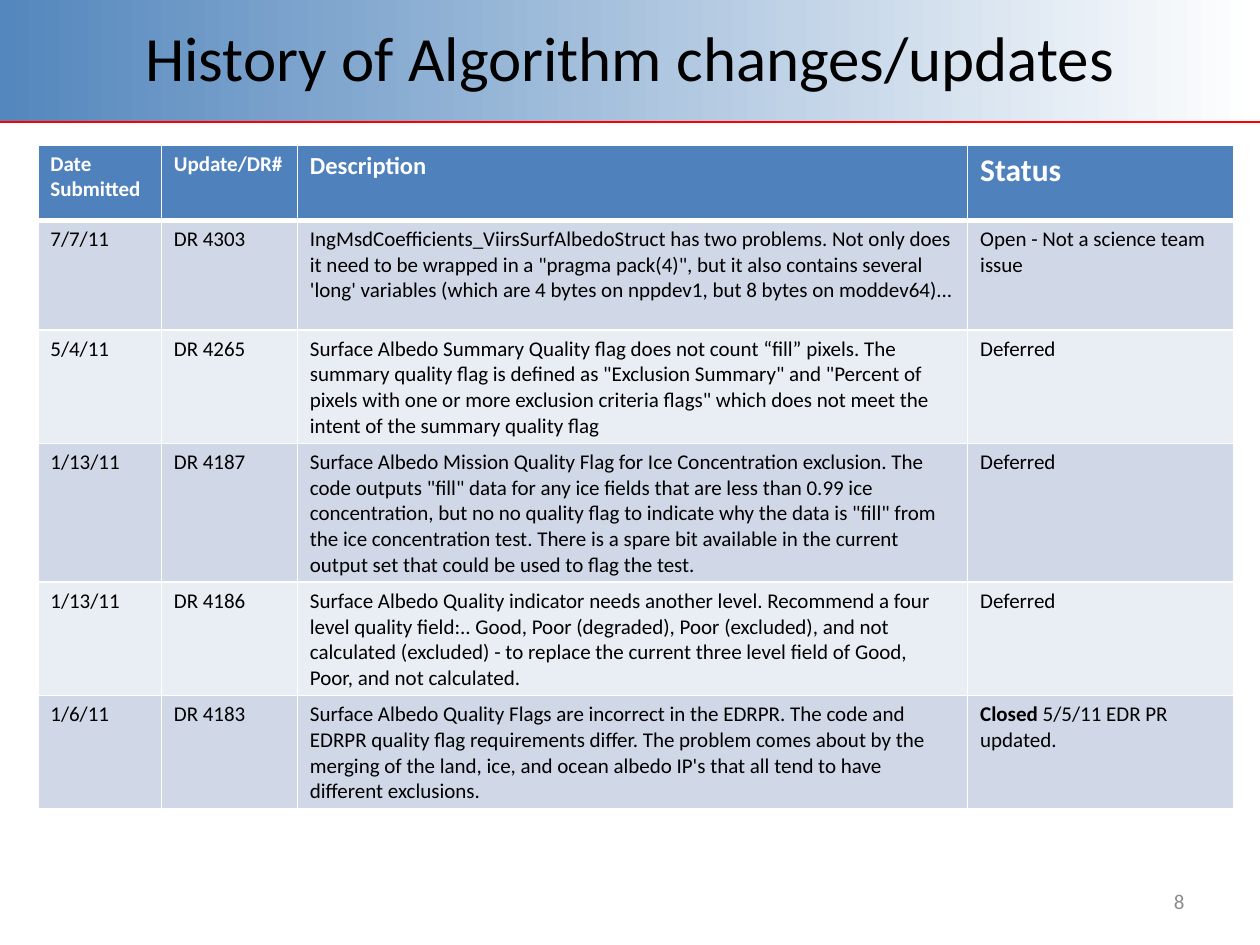
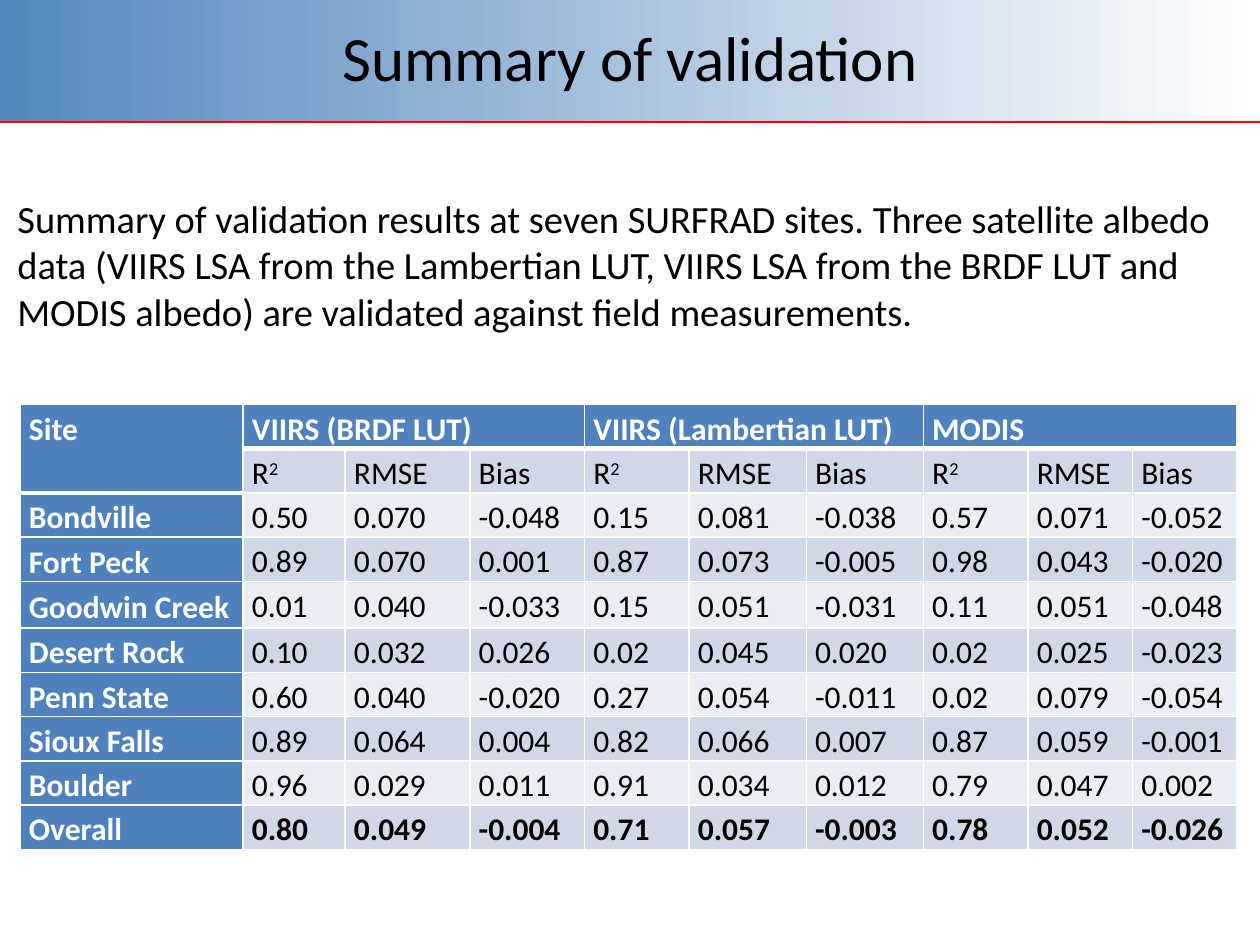
from dataclasses import dataclass

from lxml import etree
from pptx import Presentation
from pptx.dml.color import RGBColor
from pptx.enum.shapes import MSO_CONNECTOR, MSO_SHAPE
from pptx.enum.text import MSO_ANCHOR, PP_ALIGN
from pptx.oxml.ns import qn
from pptx.util import Inches, Pt

RECT = MSO_SHAPE.RECTANGLE
LINE = MSO_CONNECTOR.STRAIGHT
TOP, MID = MSO_ANCHOR.TOP, MSO_ANCHOR.MIDDLE
LEFT, CENTER, RIGHT = PP_ALIGN.LEFT, PP_ALIGN.CENTER, PP_ALIGN.RIGHT


@dataclass(frozen=True)
class Theme:
    font: str = "Calibri"
    black: str = "000000"
    white: str = "FFFFFF"
    gray: str = "8C8C8C"
    red: str = "FF0000"
    band: str = "5487BD"
    head: str = "4F81BD"
    dark: str = "D0D8E8"
    light: str = "E9EDF4"
    title: int = 36
    body: int = 22
    large: int = 18
    medium: int = 14
    small: int = 12
    thin: int = 1
    thick: int = 3


T = Theme()

# Change history
LOG_COLS = [0.98, 1.08, 5.32, 2.11]
LOG_ROWS = [0.6] + [0.87] * 5
LOG_HEAD = [("Date Submitted", T.small), ("Update/DR#", T.small),
            ("Description", T.medium), ("Status", T.large)]
LOG = [
    ("7/7/11", "DR 4303",
     "IngMsdCoefficients_ViirsSurfAlbedoStruct has two problems. Not only does "
     "it need to be wrapped in a \"pragma pack(4)\", but it also contains several "
     "'long' variables (which are 4 bytes on nppdev1, but 8 bytes on moddev64)...",
     "Open - Not a science team issue"),
    ("5/4/11", "DR 4265",
     "Surface Albedo Summary Quality flag does not count “fill” pixels. The "
     "summary quality flag is defined as \"Exclusion Summary\" and \"Percent of "
     "pixels with one or more exclusion criteria flags\" which does not meet the "
     "intent of the summary quality flag",
     "Deferred"),
    ("1/13/11", "DR 4187",
     "Surface Albedo Mission Quality Flag for Ice Concentration exclusion. The "
     "code outputs \"fill\" data for any ice fields that are less than 0.99 ice "
     "concentration, but no no quality flag to indicate why the data is \"fill\" "
     "from the ice concentration test. There is a spare bit available in the "
     "current output set that could be used to flag the test.",
     "Deferred"),
    ("1/13/11", "DR 4186",
     "Surface Albedo Quality indicator needs another level. Recommend a four "
     "level quality field:.. Good, Poor (degraded), Poor (excluded), and not "
     "calculated (excluded) - to replace the current three level field of Good, "
     "Poor, and not calculated.",
     "Deferred"),
    ("1/6/11", "DR 4183",
     "Surface Albedo Quality Flags are incorrect in the EDRPR. The code and "
     "EDRPR quality flag requirements differ. The problem comes about by the "
     "merging of the land, ice, and ocean albedo IP's that all tend to have "
     "different exclusions.",
     [("Closed", {"bold": True}), (" 5/5/11 EDR PR updated.", {})]),
]

# Validation results
SITE_COLS = [1.77, 0.81, 0.99, 0.91, 0.83, 0.93, 0.93, 0.83, 0.83, 0.83]
SITE_ROWS = [0.35] * 4 + [0.37] + [0.35] * 5
GROUPS = ["VIIRS (BRDF LUT)", "VIIRS (Lambertian LUT)", "MODIS"]
STATS = [[("R", {}), ("2", {"base": 30})], "RMSE", "Bias"]
SITES = [
    ("Bondville", "0.50 0.070 -0.048 0.15 0.081 -0.038 0.57 0.071 -0.052"),
    ("Fort Peck", "0.89 0.070 0.001 0.87 0.073 -0.005 0.98 0.043 -0.020"),
    ("Goodwin Creek", "0.01 0.040 -0.033 0.15 0.051 -0.031 0.11 0.051 -0.048"),
    ("Desert Rock", "0.10 0.032 0.026 0.02 0.045 0.020 0.02 0.025 -0.023"),
    ("Penn State", "0.60 0.040 -0.020 0.27 0.054 -0.011 0.02 0.079 -0.054"),
    ("Sioux Falls", "0.89 0.064 0.004 0.82 0.066 0.007 0.87 0.059 -0.001"),
    ("Boulder", "0.96 0.029 0.011 0.91 0.034 0.012 0.79 0.047 0.002"),
    ("Overall", "0.80 0.049 -0.004 0.71 0.057 -0.003 0.78 0.052 -0.026"),
]


def rgb(code):
    return RGBColor.from_string(code)


def box(*sizes):
    return [Inches(size) for size in sizes]


def write(frame, text, size=T.small, color=T.black, bold=False, align=LEFT,
          space=None):
    """Fill a frame with one paragraph: a string or (string, format) runs."""
    para = frame.paragraphs[0]
    para.alignment = align
    if space:
        para.line_spacing = space
    for words, form in [(text, {})] if isinstance(text, str) else text:
        run = para.add_run()
        run.text = words
        font = run.font
        font.name, font.size = T.font, Pt(size)
        font.bold = form.get("bold", bold)
        font.color.rgb = rgb(color)
        if "base" in form:
            font._element.set("baseline", str(form["base"] * 1000))


def label(slide, text, at, anchor=TOP, **form):
    frame = slide.shapes.add_textbox(*box(*at)).text_frame
    frame.word_wrap = True
    frame.vertical_anchor = anchor
    write(frame, text, **form)


def edge(cell, top, bottom):
    """Give a filled cell white borders of the stated widths."""
    props = cell._tc.get_or_add_tcPr()
    sides = [("lnL", T.thin), ("lnR", T.thin), ("lnT", top), ("lnB", bottom)]
    for place, (side, width) in enumerate(sides):
        line = etree.Element(qn(f"a:{side}"), w=str(Pt(width)))
        fill = etree.SubElement(line, qn("a:solidFill"))
        etree.SubElement(fill, qn("a:srgbClr"), val=T.white)
        props.insert(place, line)


def grid(slide, left, top, cols, rows, heads):
    """Add a banded table; heads(row, col) tells which cells are headings."""
    at = box(left, top, sum(cols), sum(rows))
    table = slide.shapes.add_table(len(rows), len(cols), *at).table
    table.horz_banding = False
    for col, width in zip(table.columns, cols):
        col.width = Inches(width)
    for row, height in zip(table.rows, rows):
        row.height = Inches(height)
    for r in range(len(rows)):
        for c in range(len(cols)):
            cell = table.cell(r, c)
            shade = T.dark if r % 2 else T.light
            cell.fill.solid()
            cell.fill.fore_color.rgb = rgb(T.head if heads(r, c) else shade)
    return table


def rule(table, thick):
    """Draw the borders; thick(row, col) tells where the lower edge is heavy."""
    for r in range(len(table.rows)):
        for c in range(len(table.columns)):
            above = T.thick if r and thick(r - 1, c) else T.thin
            below = T.thick if thick(r, c) else T.thin
            edge(table.cell(r, c), above, below)


def brand(deck, slide):
    """Build the title band and red line, then place them on the master."""
    band = slide.shapes.add_shape(RECT, *box(0, -0.01, 10, 0.97))
    band.shadow.inherit = False
    band.line.fill.background()
    band.fill.gradient()
    band.fill.gradient_angle = 0
    for stop, code, spot in zip(band.fill.gradient_stops, (T.band, T.white), (0, 1)):
        stop.color.rgb = rgb(code)
        stop.position = spot
    line = slide.shapes.add_connector(LINE, *box(0, 0.97, 10, 0.97))
    line.line.color.rgb = rgb(T.red)
    line.line.width = Pt(1.25)
    etree.SubElement(line.element.spPr, qn("a:effectLst"))
    tree = deck.slide_master.shapes.element
    for place, part in enumerate((band, line)):
        part.element.xpath(".//p:cNvPr")[0].set("id", str(100 + place))
        tree.insert(2 + place, part.element)


def page(deck, text):
    slide = deck.slides.add_slide(deck.slide_layouts[5])
    title = slide.shapes.title
    title.left, title.top, title.width, title.height = box(0.5, 0, 9, 0.9)
    title.text_frame.vertical_anchor = MID
    write(title.text_frame, text, size=T.title, align=CENTER)
    return slide


def history(slide):
    label(slide, "8", (7.17, 6.95, 2.33, 0.4), MID, color=T.gray, align=RIGHT)
    table = grid(slide, 0.3, 1.15, LOG_COLS, LOG_ROWS, lambda r, c: r == 0)
    for c, (text, size) in enumerate(LOG_HEAD):
        write(table.cell(0, c).text_frame, text, size=size, color=T.white, bold=True)
    for r, entry in enumerate(LOG, 1):
        for c, text in enumerate(entry):
            write(table.cell(r, c).text_frame, text)
    rule(table, lambda r, c: r == 0)


def results(slide):
    table = grid(slide, 0.16, 3.21, SITE_COLS, SITE_ROWS,
                 lambda r, c: r == 0 or c == 0)

    def put(r, c, text, head=False, bold=False, anchor=TOP):
        cell = table.cell(r, c)
        cell.margin_left = cell.margin_right = Inches(0.07)
        cell.margin_top = cell.margin_bottom = 0
        cell.vertical_anchor = anchor
        write(cell.text_frame, text, size=T.large, bold=head or bold,
              color=T.white if head else T.black, space=1.15)

    # Headings: the site spans two rows, each group three columns
    table.cell(0, 0).merge(table.cell(1, 0))
    put(0, 0, "Site", head=True)
    for g, group in enumerate(GROUPS):
        first = 1 + 3 * g
        table.cell(0, first).merge(table.cell(0, first + 2))
        put(0, first, group, head=True)
        for s, stat in enumerate(STATS):
            put(1, first + s, stat)

    # Figures by site
    for r, (site, values) in enumerate(SITES, 2):
        last = site == "Overall"
        put(r, 0, site, head=True, anchor=MID)
        for c, value in enumerate(values.split(), 1):
            put(r, c, value, bold=last, anchor=MID if last else TOP)
    rule(table, lambda r, c: r == 0 or (r, c) == (1, 0))

    label(slide, "Summary of validation results at seven SURFRAD sites. Three "
          "satellite albedo data (VIIRS LSA from the Lambertian LUT, VIIRS LSA "
          "from the BRDF LUT and MODIS albedo) are validated against field "
          "measurements.", (0.04, 1.5, 9.84, 1.21), size=T.body)


def main():
    deck = Presentation()
    deck.slide_width, deck.slide_height = box(10, 7.5)
    first = page(deck, "History of Algorithm changes/updates")
    brand(deck, first)
    history(first)
    results(page(deck, "Summary of validation"))
    deck.save("out.pptx")


if __name__ == "__main__":
    main()
